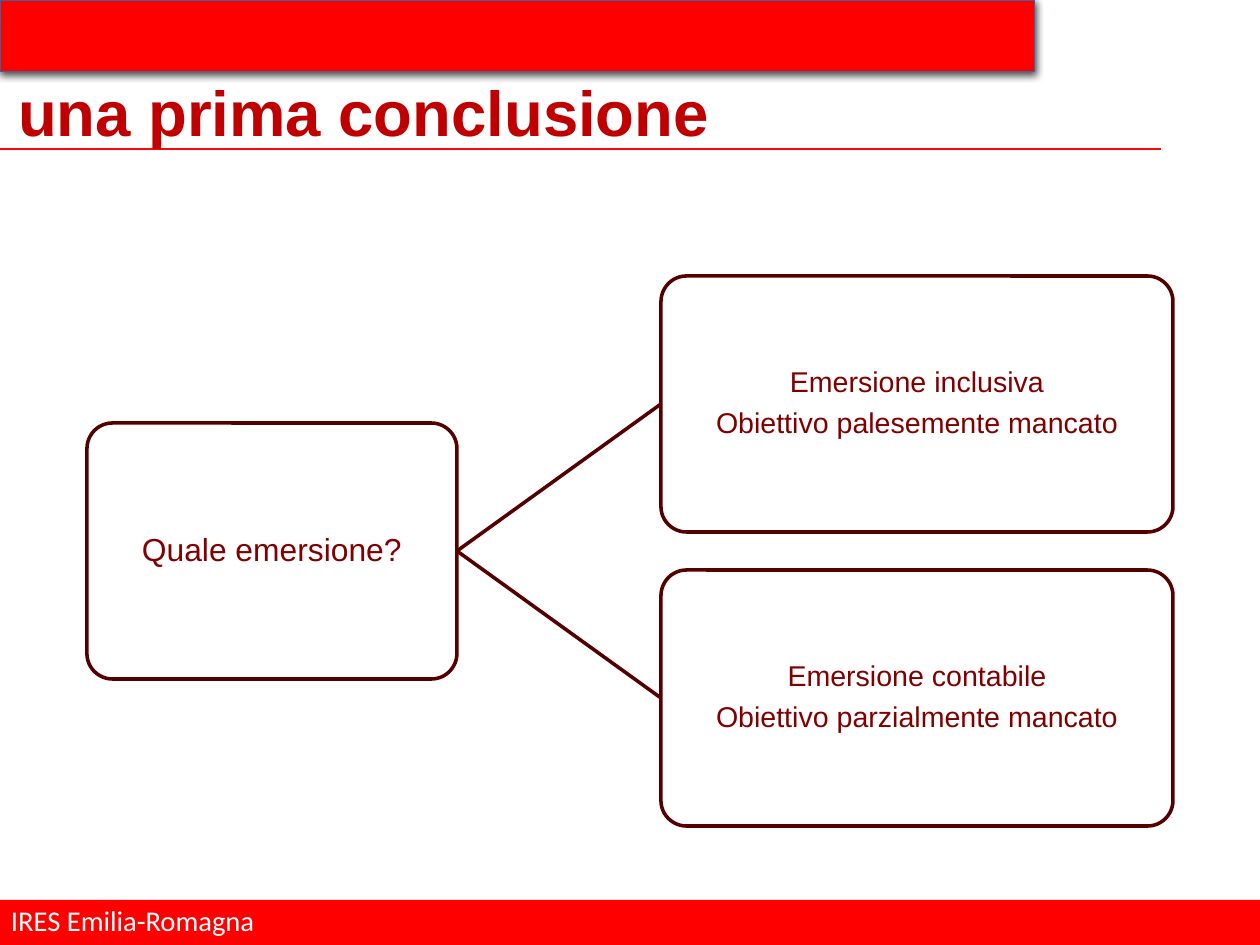
"""Build the slide that splits the emersione question into two outcomes."""
from dataclasses import dataclass

from lxml.etree import SubElement
from pptx import Presentation
from pptx.dml.color import RGBColor as RGB
from pptx.enum.shapes import MSO_CONNECTOR as CONN, MSO_SHAPE as SHAPE
from pptx.enum.text import MSO_ANCHOR as ANCHOR, MSO_AUTO_SIZE as FIT, PP_ALIGN as ALIGN
from pptx.oxml.ns import qn
from pptx.util import Emu, Pt

EMU_PER_PX = 8000
SLIDE_W, SLIDE_H = 1260, 945
BOX_H, BOX_STEP, BOX_TOP = 256, 294, 276
ROOT_X, ROOT_W = 87, 370
OUTCOME_X, OUTCOME_W = 661, 512
FOOTER_H = 45

QUESTION = "Quale emersione?"
OUTCOMES = [
    ["Emersione inclusiva", "Obiettivo palesemente mancato"],
    ["Emersione contabile", "Obiettivo parzialmente mancato"],
]


@dataclass(frozen=True)
class Theme:
    """Colours, fonts and type sizes of the slide."""
    red: str = "FF0000"
    rule: str = "FF0707"
    bar_edge: str = "3465A4"
    shadow: str = "4C4C4C"
    title: str = "C00000"
    box_edge: str = "550000"
    box_text: str = "800000"
    white: str = "FFFFFF"
    font: str = "Arial"
    footer_font: str = "Calibri"
    title_size: int = 40
    root_size: int = 20
    text_size: int = 18
    thin: float = 0.75
    thick: float = 2.25


THEME = Theme()


def px(*lengths):
    """Turn px lengths into EMU."""
    return [Emu(n * EMU_PER_PX) for n in lengths]


def write(sp, lines, size, color, font=THEME.font, bold=False, align=ALIGN.LEFT,
          spacing=0.93, after=0, insets=(0, 0), anchor=ANCHOR.MIDDLE):
    """Write lines as formatted paragraphs in a shape."""
    tf = sp.text_frame
    tf.word_wrap, tf.auto_size, tf.vertical_anchor = True, FIT.NONE, anchor
    tf.margin_left, tf.margin_top = tf.margin_right, tf.margin_bottom = px(*insets)
    for i, line in enumerate(lines):
        p = tf.add_paragraph() if i else tf.paragraphs[0]
        p.alignment, p.line_spacing = align, spacing
        p.space_before, p.space_after = Pt(0), Pt(after)
        r = p.add_run()
        r.text = line
        r.font.name, r.font.size, r.font.bold = font, Pt(size), bold
        r.font.color.rgb = RGB.from_string(color)


def add_block(s, kind, box, fill=None, edge=None, width=THEME.thin):
    """Add a flat preset shape."""
    sp = s.shapes.add_shape(kind, *px(*box))
    sp.shadow.inherit = False
    if fill:
        sp.fill.solid()
        sp.fill.fore_color.rgb = RGB.from_string(fill)
    else:
        sp.fill.background()
    if edge:
        sp.line.color.rgb = RGB.from_string(edge)
        sp.line.width = Pt(width)
    else:
        sp.line.fill.background()
    return sp


def add_shadow(sp):
    """Give a shape a soft shadow below it."""
    effects = sp._element.spPr.find(qn("a:effectLst"))
    shadow = SubElement(effects, qn("a:outerShdw"), blurRad="63500", dist="17780",
                        dir="5400000", algn="ctr", rotWithShape="0")
    SubElement(shadow, qn("a:srgbClr"), val=THEME.shadow)


def add_line(s, ends, color, width):
    """Add a straight line without shadow."""
    line = s.shapes.add_connector(CONN.STRAIGHT, *px(*ends))
    line.line.color.rgb = RGB.from_string(color)
    line.line.width = Pt(width)
    SubElement(line._element.spPr, qn("a:effectLst"))
    return line


def add_node(s, box, lines, size):
    """Add an outlined rounded box with centred text."""
    sp = add_block(s, SHAPE.ROUNDED_RECTANGLE, box, edge=THEME.box_edge, width=THEME.thick)
    sp.adjustments[0] = 0.1
    write(sp, lines, size, THEME.box_text, align=ALIGN.CENTER, spacing=0.9,
          after=0.35 * size, insets=(9, 9))
    return sp


def join(s, start, end):
    """Join the right side of one box to the left side of another."""
    line = add_line(s, (0, 0, 0, 0), THEME.box_edge, THEME.thick)
    line.begin_connect(start, 3)
    line.end_connect(end, 1)


def add_frame(s):
    """Add the top bar, the rule and the footer."""
    add_shadow(add_block(s, SHAPE.RECTANGLE, (0, 0, 1035, 72), THEME.red, THEME.bar_edge))
    add_line(s, (0, 149, 1161, 149), THEME.rule, THEME.thin)
    footer = add_block(s, SHAPE.RECTANGLE, (0, SLIDE_H - FOOTER_H, SLIDE_W, FOOTER_H), THEME.red)
    write(footer, ["IRES Emilia-Romagna"], THEME.text_size, THEME.white,
          font=THEME.footer_font, insets=(11, 6), anchor=ANCHOR.TOP)


def add_tree(s):
    """Add the question and its outcomes."""
    root_top = BOX_TOP + BOX_STEP * (len(OUTCOMES) - 1) // 2
    root = add_node(s, (ROOT_X, root_top, ROOT_W, BOX_H), [QUESTION], THEME.root_size)
    for i, lines in enumerate(OUTCOMES):
        box = (OUTCOME_X, BOX_TOP + i * BOX_STEP, OUTCOME_W, BOX_H)
        join(s, root, add_node(s, box, lines, THEME.text_size))


def add_title(s, text):
    """Place the title placeholder above the rule and in front."""
    title = s.shapes.title
    title.left, title.top, title.width, title.height = px(18, 37, 1133, 156)
    write(title, [text], THEME.title_size, THEME.title, bold=True)
    s.shapes._spTree.append(title._element)


def main():
    """Build and save the slide."""
    prs = Presentation()
    prs.slide_width, prs.slide_height = px(SLIDE_W, SLIDE_H)
    s = prs.slides.add_slide(prs.slide_layouts[5])
    add_frame(s)
    add_tree(s)
    add_title(s, "una prima conclusione")
    prs.save("out.pptx")


if __name__ == "__main__":
    main()
